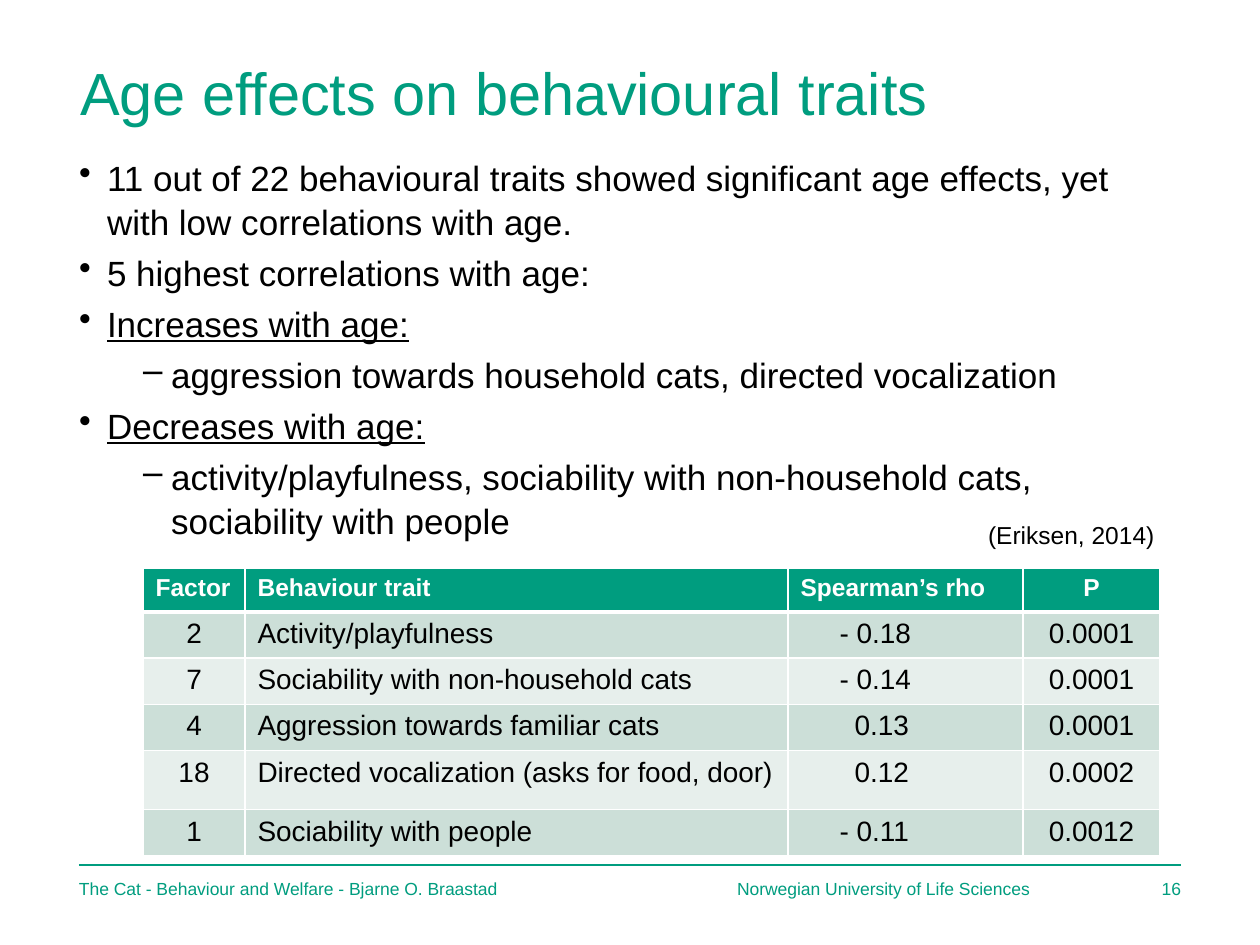
import pptx
import pptx.util
import pptx.dml.color
import pptx.enum.shapes
import pptx.enum.text
import pptx.oxml.ns
from dataclasses import dataclass
from lxml import etree

ALIGN = pptx.enum.text.PP_ALIGN
ANCHOR = pptx.enum.text.MSO_ANCHOR


@dataclass(frozen=True)
class Theme:
    font: str = "Arial"
    green: str = "009D7F"
    black: str = "000000"
    white: str = "FFFFFF"
    bands: tuple = ("CCDFD8", "E7EFEC")
    title: int = 34
    body: int = 20
    cell: int = 16
    head: int = 14
    foot: int = 10


THEME = Theme()
WIDE, HIGH = 1260, 945


def px(n):
    return pptx.util.Emu(round(n * 914400 / 126))


def rgb(code):
    return pptx.dml.color.RGBColor.from_string(code)


def child(parent, tag, **attrs):
    node = etree.SubElement(parent, pptx.oxml.ns.qn(tag))
    for key, value in attrs.items():
        node.set(key, str(value))
    return node


def write(para, text, size, color=THEME.black, bold=False, line=False,
          align=ALIGN.LEFT, left=0, hang=0, bullet=None):
    props = para._p.get_or_add_pPr()
    props.set("marL", str(px(left)))
    props.set("indent", str(-px(hang)))
    if bullet:
        child(props, "a:buChar", char=bullet)
    para.alignment = align
    run = para.add_run()
    run.text = text
    font = run.font
    font.name, font.size, font.bold = THEME.font, pptx.util.Pt(size), bold
    font.underline = line
    font.color.rgb = rgb(color)


def frame(slide, box, anchor=ANCHOR.TOP, inset=(0, 0)):
    text = slide.shapes.add_textbox(*map(px, box)).text_frame
    text.word_wrap = True
    text.vertical_anchor = anchor
    text.margin_left = text.margin_right = px(inset[0])
    text.margin_top = text.margin_bottom = px(inset[1])
    return text


def title(slide, box):
    text = frame(slide, box, ANCHOR.BOTTOM)
    write(text.paragraphs[0], "Age effects on behavioural traits",
          THEME.title, color=THEME.green)


def points(slide, box):
    # Level, underline, wording
    items = [
        (0, False, "11 out of 22 behavioural traits showed significant age "
                   "effects, yet with low correlations with age."),
        (0, False, "5 highest correlations with age:"),
        (0, True, "Increases with age:"),
        (1, False, "aggression towards household cats, directed vocalization"),
        (0, True, "Decreases with age:"),
        (1, False, "activity/playfulness, sociability with non-household "
                   "cats, sociability with people"),
    ]
    text = frame(slide, box)
    for i, (level, line, words) in enumerate(items):
        para = text.add_paragraph() if i else text.paragraphs[0]
        para.level = level
        para.line_spacing = 1.05
        para.space_before = pptx.util.Pt(4 if i else 0)
        write(para, words, THEME.body, line=line, left=(28, 92)[level],
              hang=28, bullet="•–"[level])


def source(slide, box):
    text = frame(slide, box, inset=(13, 6))
    write(text.paragraphs[0], "(Eriksen, 2014)", THEME.head)


def edge(cell, base):
    props = cell._tc.get_or_add_tcPr()
    sides = {"a:lnL": 1, "a:lnR": 1, "a:lnT": 1, "a:lnB": base}
    for i, (tag, width) in enumerate(sides.items()):
        line = child(props, tag, w=pptx.util.Pt(width))
        child(child(line, "a:solidFill"), "a:srgbClr", val=THEME.white)
        props.insert(i, line)


def traits(slide, box):
    head = ("Factor", "Behaviour trait", "Spearman’s rho", "P")
    rows = [
        ("2", "Activity/playfulness", "- 0.18", "0.0001"),
        ("7", "Sociability with non-household cats", "- 0.14", "0.0001"),
        ("4", "Aggression towards familiar cats", "0.13", "0.0001"),
        ("18", "Directed vocalization (asks for food, door)", "0.12",
         "0.0002"),
        ("1", "Sociability with people", "- 0.11", "0.0012"),
    ]
    grid = slide.shapes.add_table(len(rows) + 1, len(head),
                                  *map(px, box)).table
    for col, width in zip(grid.columns, (102, 543, 235, 137)):
        col.width = px(width)
    for row, height in zip(grid.rows, (44, 46, 46, 46, 59, 46)):
        row.height = px(height)
    for r, row in enumerate([head] + rows):
        for c, words in enumerate(row):
            cell = grid.cell(r, c)
            cell.fill.solid()
            cell.fill.fore_color.rgb = rgb(
                THEME.bands[(r - 1) % 2] if r else THEME.green)
            edge(cell, 1 if r else 3)
            para = cell.text_frame.paragraphs[0]
            mid = c == 3 or (c == 0 and r > 0)
            align = ALIGN.CENTER if mid else ALIGN.LEFT
            if r == 0:
                write(para, words, THEME.head, color=THEME.white, bold=True,
                      align=align)
            else:
                # Signed and unsigned values line up on their digits
                left = (39 if words[0] == "-" else 54) if c == 2 else 0
                write(para, words, THEME.cell, align=align, left=left)


def footer(slide, box):
    x, y, w, h = box
    # Rule
    rule = slide.shapes.add_connector(
        pptx.enum.shapes.MSO_CONNECTOR.STRAIGHT,
        px(x), px(y), px(x + w), px(y))
    rule.line.color.rgb = rgb(THEME.green)
    rule.line.width = pptx.util.Pt(1)
    child(rule._element.spPr, "a:effectLst")
    # Course, school and page number
    parts = [
        (0, 655, "The Cat - Behaviour and Welfare - Bjarne O. Braastad",
         ALIGN.LEFT),
        (658, 398, "Norwegian University of Life Sciences", ALIGN.LEFT),
        (1060, 42, "16", ALIGN.RIGHT),
    ]
    for left, width, words, align in parts:
        text = frame(slide, (x + left, y + 13, width, h - 13), ANCHOR.MIDDLE)
        write(text.paragraphs[0], words, THEME.foot, color=THEME.green,
              align=align)


def main():
    deck = pptx.Presentation()
    deck.slide_width, deck.slide_height = px(WIDE), px(HIGH)
    slide = deck.slides.add_slide(deck.slide_layouts[6])
    footer(slide, (79, 865, 1102, 34))
    title(slide, (80, 55, 1002, 72))
    points(slide, (79, 154, 1102, 388))
    source(slide, (975, 514, 206, 43))
    traits(slide, (143, 568, 1017, 287))
    deck.save("out.pptx")


if __name__ == "__main__":
    main()
